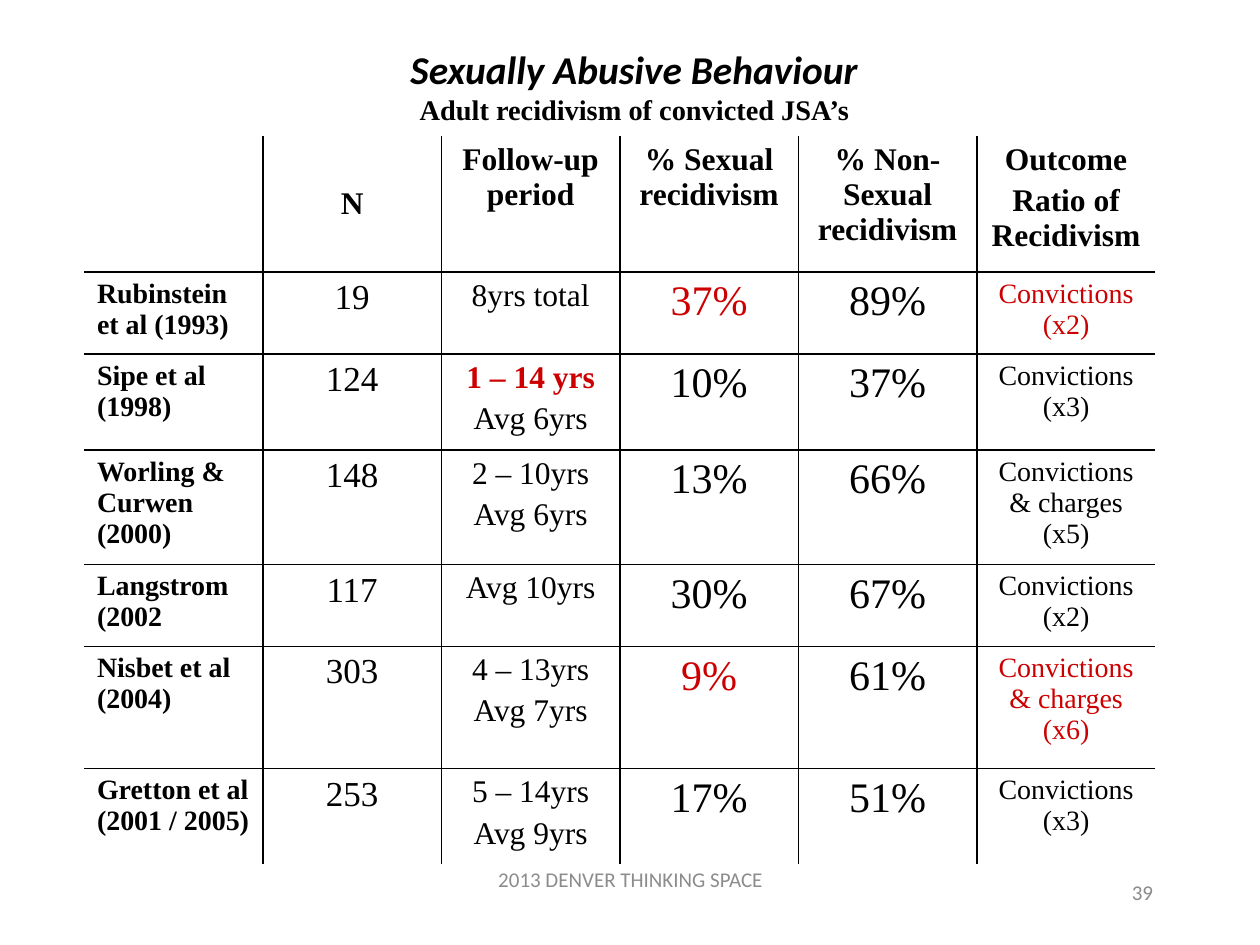
import pptx
import pptx.dml.color
import pptx.enum.text
import pptx.oxml.ns
import pptx.util
from lxml import etree

Inches = pptx.util.Inches
Pt = pptx.util.Pt
ALIGN = pptx.enum.text.PP_ALIGN
ANCHOR = pptx.enum.text.MSO_ANCHOR

BLACK = pptx.dml.color.RGBColor(0x00, 0x00, 0x00)
RED = pptx.dml.color.RGBColor(0xCC, 0x00, 0x00)
FOOTER_GRAY = pptx.dml.color.RGBColor(0x8C, 0x8C, 0x8C)
NUMBER_GRAY = pptx.dml.color.RGBColor(0x89, 0x89, 0x89)
SANS = "Calibri"
SERIF = "Times New Roman"

TABLE_LEFT, TABLE_TOP, TABLE_WIDTH = 0.67, 1.08, 8.5
ROW_HEIGHTS = [1.08, 0.65, 0.76, 0.91, 0.65, 0.97, 0.76]
COLUMN_SIZES = [16, 20, 18, 24, 24, 16]
HEADER_SIZE = 18
ROWS = [
    ["", "N", "Follow-up period", "% Sexual recidivism",
     "% Non-Sexual recidivism", "Outcome\nRatio of Recidivism"],
    ["Rubinstein et al (1993)", "19", "8yrs total", "37%", "89%", "Convictions (x2)"],
    ["Sipe et al (1998)", "124", "1 – 14 yrs\nAvg 6yrs", "10%", "37%", "Convictions (x3)"],
    ["Worling & Curwen (2000)", "148", "2 – 10yrs\nAvg 6yrs", "13%", "66%",
     "Convictions & charges (x5)"],
    ["Langstrom (2002", "117", "Avg 10yrs", "30%", "67%", "Convictions (x2)"],
    ["Nisbet et al (2004)", "303", "4 – 13yrs\nAvg 7yrs", "9%", "61%",
     "Convictions & charges (x6)"],
    ["Gretton et al (2001 / 2005)", "253", "5 – 14yrs\nAvg 9yrs", "17%", "51%",
     "Convictions (x3)"],
]
RED_CELLS = {(1, 3), (1, 5), (5, 3), (5, 5)}
KEY_PERIOD = (2, 2)


def format_run(run, size, font, color, bold=False, italic=False):
    run.font.size = Pt(size)
    run.font.name = font
    run.font.color.rgb = color
    run.font.bold = bold
    run.font.italic = italic


def add_text(slide, box, text, align, anchor, styles):
    """Add a text box; each run takes the next entry of styles."""
    frame = slide.shapes.add_textbox(*(Inches(length) for length in box)).text_frame
    frame.word_wrap = True
    frame.vertical_anchor = anchor
    frame.text = text
    paragraph = frame.paragraphs[0]
    paragraph.alignment = align
    for run, style in zip(paragraph.runs, styles):
        format_run(run, *style)


def set_borders(cell, visible):
    """Draw a thin black line on the sides marked visible, none on the others."""
    properties = cell._tc.get_or_add_tcPr()
    qn = pptx.oxml.ns.qn
    for side in ("L", "R", "T", "B"):
        line = etree.SubElement(properties, qn(f"a:ln{side}"), w=str(Pt(1)))
        if visible[side]:
            fill = etree.SubElement(line, qn("a:solidFill"))
            etree.SubElement(fill, qn("a:srgbClr"), val=str(BLACK))
        else:
            etree.SubElement(line, qn("a:noFill"))


def fill_cell(cell, row, column):
    is_header = row == 0
    size = HEADER_SIZE if is_header else COLUMN_SIZES[column]
    cell.text_frame.text = ROWS[row][column]
    cell.vertical_anchor = ANCHOR.MIDDLE if (row, column) == (0, 1) else ANCHOR.TOP
    for index, paragraph in enumerate(cell.text_frame.paragraphs):
        is_key = (row, column) == KEY_PERIOD and index == 0
        is_red = is_key or (row, column) in RED_CELLS
        paragraph.alignment = ALIGN.LEFT if column == 0 else ALIGN.CENTER
        if index > 0:
            paragraph.space_before = Pt(0.2 * size)
        for run in paragraph.runs:
            format_run(run, size, SERIF, RED if is_red else BLACK,
                       bold=is_header or column == 0 or is_key)


def add_recidivism_table(slide):
    row_count, column_count = len(ROWS), len(COLUMN_SIZES)
    table = slide.shapes.add_table(
        row_count, column_count, Inches(TABLE_LEFT), Inches(TABLE_TOP),
        Inches(TABLE_WIDTH), Inches(sum(ROW_HEIGHTS))).table
    table.first_row = False
    table.horz_banding = False
    for column in table.columns:
        column.width = Inches(TABLE_WIDTH / column_count)
    for row, height in enumerate(ROW_HEIGHTS):
        table.rows[row].height = Inches(height)
        for column in range(column_count):
            cell = table.cell(row, column)
            fill_cell(cell, row, column)
            set_borders(cell, {"L": column > 0, "R": column < column_count - 1,
                               "T": row > 0, "B": row < row_count - 1})
            cell.fill.background()


def main():
    presentation = pptx.Presentation()
    presentation.slide_width = Inches(10)
    presentation.slide_height = Inches(7.5)
    slide = presentation.slides.add_slide(presentation.slide_layouts[6])

    add_text(slide, (3.42, 6.83, 3.17, 0.5), "2013 DENVER THINKING SPACE",
             ALIGN.CENTER, ANCHOR.TOP, [(12, SANS, FOOTER_GRAY)])
    add_text(slide, (7.17, 6.83, 2.08, 0.5), "39",
             ALIGN.RIGHT, ANCHOR.MIDDLE, [(12, SANS, NUMBER_GRAY)])
    add_text(slide, (0.7, 0.47, 8.67, 0.42),
             "Sexually Abusive Behaviour\vAdult recidivism of convicted JSA’s",
             ALIGN.CENTER, ANCHOR.MIDDLE,
             [(22.5, SANS, BLACK, True, True), (16.2, SERIF, BLACK, True)])
    add_recidivism_table(slide)

    presentation.save("out.pptx")


if __name__ == "__main__":
    main()
